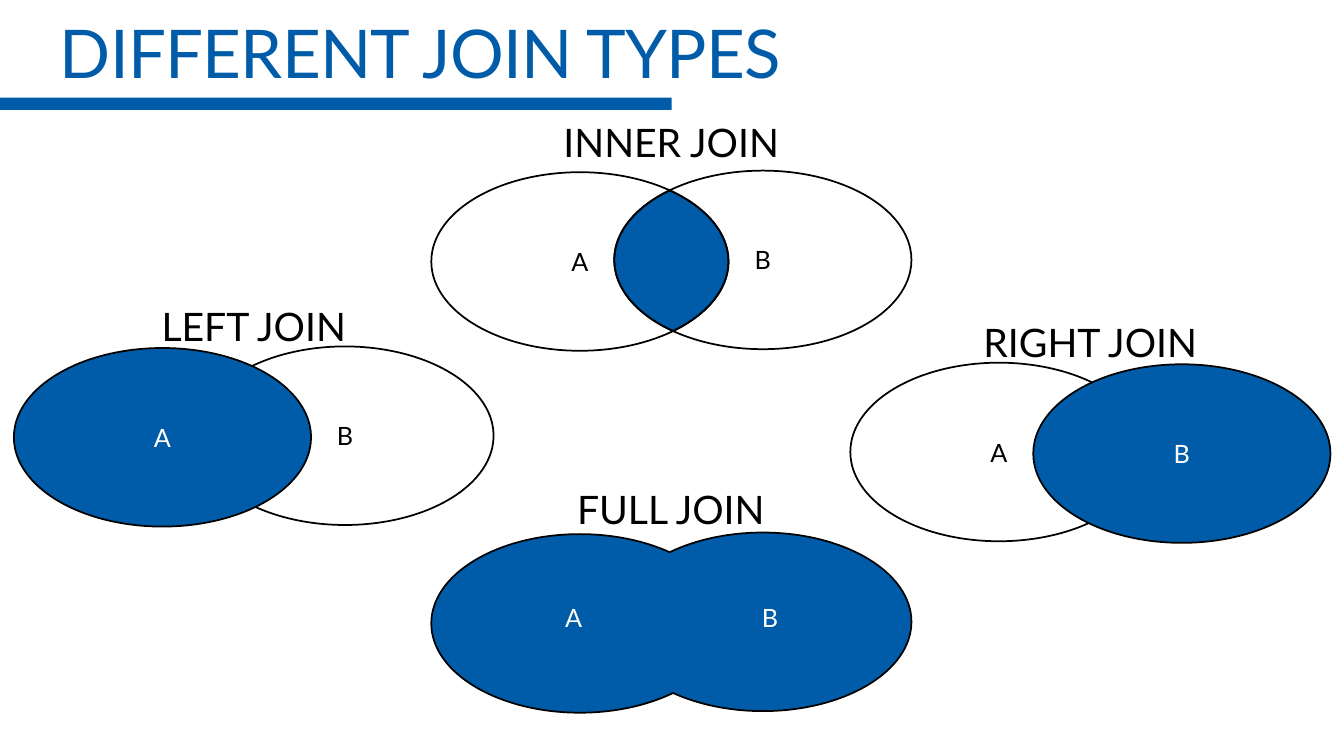
from math import acos, atan2, ceil, cos, floor, hypot, pi, sin, tan

from lxml.etree import SubElement
from pptx import Presentation
from pptx.dml.color import RGBColor
from pptx.enum.shapes import MSO_SHAPE
from pptx.enum.text import MSO_ANCHOR, PP_ALIGN
from pptx.oxml.ns import qn
from pptx.util import Cm, Pt

FONT = "Lato"
COLORS = {"blue": "005CA8", "black": "000000", "white": "FFFFFF"}
TITLE = "DIFFERENT JOIN TYPES"

# Lengths in centimetres
ELLIPSE_WIDTH, ELLIPSE_HEIGHT = 7.49, 4.5
LABEL_WIDTH, LABEL_HEIGHT = 17.07, 1.02

# Headings are (text, left, top, width, height)
# Ellipses are (letter, left, top, filled), from back to front
JOINS = [
    {"heading": ("LEFT JOIN", 1.91, 7.49, 8.97, 2.18),
     "ellipses": [("B", 4.95, 8.73, False), ("A", 0.35, 8.77, True)]},
    {"heading": ("FULL JOIN", 12.42, 12.1, 8.97, 2.18),
     "union": [(10.87, 13.46), (15.48, 13.42)],
     "labels": [("A", 5.92, 15.06), ("B", 10.87, 15.06)]},
    {"heading": ("INNER JOIN", 13.92, 2.86, 5.99, 1.45),
     "overlap": [(10.87, 4.34), (15.48, 4.3)],
     "ellipses": [("B", 15.48, 4.3, False), ("A", 10.87, 4.34, False)]},
    {"heading": ("RIGHT JOIN", 22.99, 7.9, 8.97, 1.45),
     "ellipses": [("A", 21.43, 9.14, False), ("B", 26.04, 9.18, True)]},
]


def rgb(name):
    return RGBColor.from_string(COLORS[name])


def add_run(paragraph, text, size, color):
    run = paragraph.add_run()
    run.text = text
    run.font.name = FONT
    run.font.size = Pt(size)
    run.font.color.rgb = rgb(color)
    return run


def add_text(slide, text, left, top, width, height, size, color):
    box = slide.shapes.add_textbox(Cm(left), Cm(top), Cm(width), Cm(height))
    box.text_frame.word_wrap = True
    paragraph = box.text_frame.paragraphs[0]
    paragraph.alignment = PP_ALIGN.CENTER
    add_run(paragraph, text, size, color)


def style_outline(shape, filled):
    shape.shadow.inherit = False
    if filled:
        shape.fill.solid()
        shape.fill.fore_color.rgb = rgb("blue")
    else:
        shape.fill.background()
    shape.line.color.rgb = rgb("black")
    shape.line.width = Pt(1.25)


def add_ellipse(slide, letter, left, top, filled):
    ellipse = slide.shapes.add_shape(
        MSO_SHAPE.OVAL, Cm(left), Cm(top), Cm(ELLIPSE_WIDTH), Cm(ELLIPSE_HEIGHT))
    style_outline(ellipse, filled)
    ellipse.text_frame.vertical_anchor = MSO_ANCHOR.MIDDLE
    paragraph = ellipse.text_frame.paragraphs[0]
    paragraph.alignment = PP_ALIGN.CENTER
    add_run(paragraph, letter, 18, "white" if filled else "black")


def arc_points(corner, start, end):
    """Return the start, then three Bezier points for each piece between quadrants."""
    def locate(angle, along=0):
        across = 1 + cos(angle) - along * sin(angle)
        down = 1 + sin(angle) + along * cos(angle)
        return (Cm(corner[0] + ELLIPSE_WIDTH / 2 * across),
                Cm(corner[1] + ELLIPSE_HEIGHT / 2 * down))

    quadrant = pi / 2
    between = range(ceil(start / quadrant), floor(end / quadrant) + 1)
    angles = [start, *(number * quadrant for number in between), end]
    points = [locate(start)]
    for begin, finish in zip(angles, angles[1:]):
        reach = 4 / 3 * tan((finish - begin) / 4)
        points += [locate(begin, reach), locate(finish, -reach), locate(finish)]
    return points


def curve_segments(shape):
    """Turn each three line segments of a freeform into one Bezier curve."""
    lines = list(shape._element.iter(qn("a:lnTo")))
    for first, second, third in zip(lines[::3], lines[1::3], lines[2::3]):
        outline = first.getparent()
        curve = SubElement(outline, qn("a:cubicBezTo"))
        first.addprevious(curve)
        for line in (first, second, third):
            curve.append(line[0])
            outline.remove(line)


def add_combined(slide, corners, is_union):
    """Draw the union or the overlap of two equal ellipses given by their corners."""
    first, second = corners
    across = (second[0] - first[0]) / (ELLIPSE_WIDTH / 2)
    down = (second[1] - first[1]) / (ELLIPSE_HEIGHT / 2)
    direction = atan2(down, across)
    half = acos(hypot(across, down) / 2)
    start, end = (half, 2 * pi - half) if is_union else (-half, half)
    points = (arc_points(first, direction + start, direction + end)
              + arc_points(second, direction + pi + start, direction + pi + end)[1:])
    builder = slide.shapes.build_freeform(*points[0])
    builder.add_line_segments(points[1:], close=True)
    shape = builder.convert_to_shape()
    curve_segments(shape)
    style_outline(shape, True)


def add_title(slide):
    bar = slide.shapes.add_shape(MSO_SHAPE.RECTANGLE, 0, Cm(2.46), Cm(16.93), Cm(0.31))
    bar.shadow.inherit = False
    bar.fill.solid()
    bar.fill.fore_color.rgb = rgb("blue")
    bar.line.fill.background()

    box = slide.shapes.add_textbox(Cm(0.91), 0, Cm(27.71), Cm(2.46))
    box.text_frame.word_wrap = True
    box.text_frame.vertical_anchor = MSO_ANCHOR.BOTTOM
    box.text_frame.margin_left = Cm(0.6)
    paragraph = box.text_frame.paragraphs[0]
    paragraph.line_spacing = 0.9
    paragraph.space_after = Pt(2)
    run = add_run(paragraph, TITLE, 48, "blue")
    run._r.get_or_add_rPr().set("spc", "-50")


def add_join(slide, join):
    for kind in ("union", "overlap"):
        if kind in join:
            add_combined(slide, join[kind], kind == "union")
    for ellipse in join.get("ellipses", []):
        add_ellipse(slide, *ellipse)
    add_text(slide, *join["heading"], 28, "black")
    for label in join.get("labels", []):
        add_text(slide, *label, LABEL_WIDTH, LABEL_HEIGHT, 18, "white")


def main():
    presentation = Presentation()
    presentation.slide_width = Cm(33.87)
    presentation.slide_height = Cm(19.05)
    slide = presentation.slides.add_slide(presentation.slide_layouts[6])
    add_title(slide)
    for join in JOINS:
        add_join(slide, join)
    presentation.save("out.pptx")


if __name__ == "__main__":
    main()
